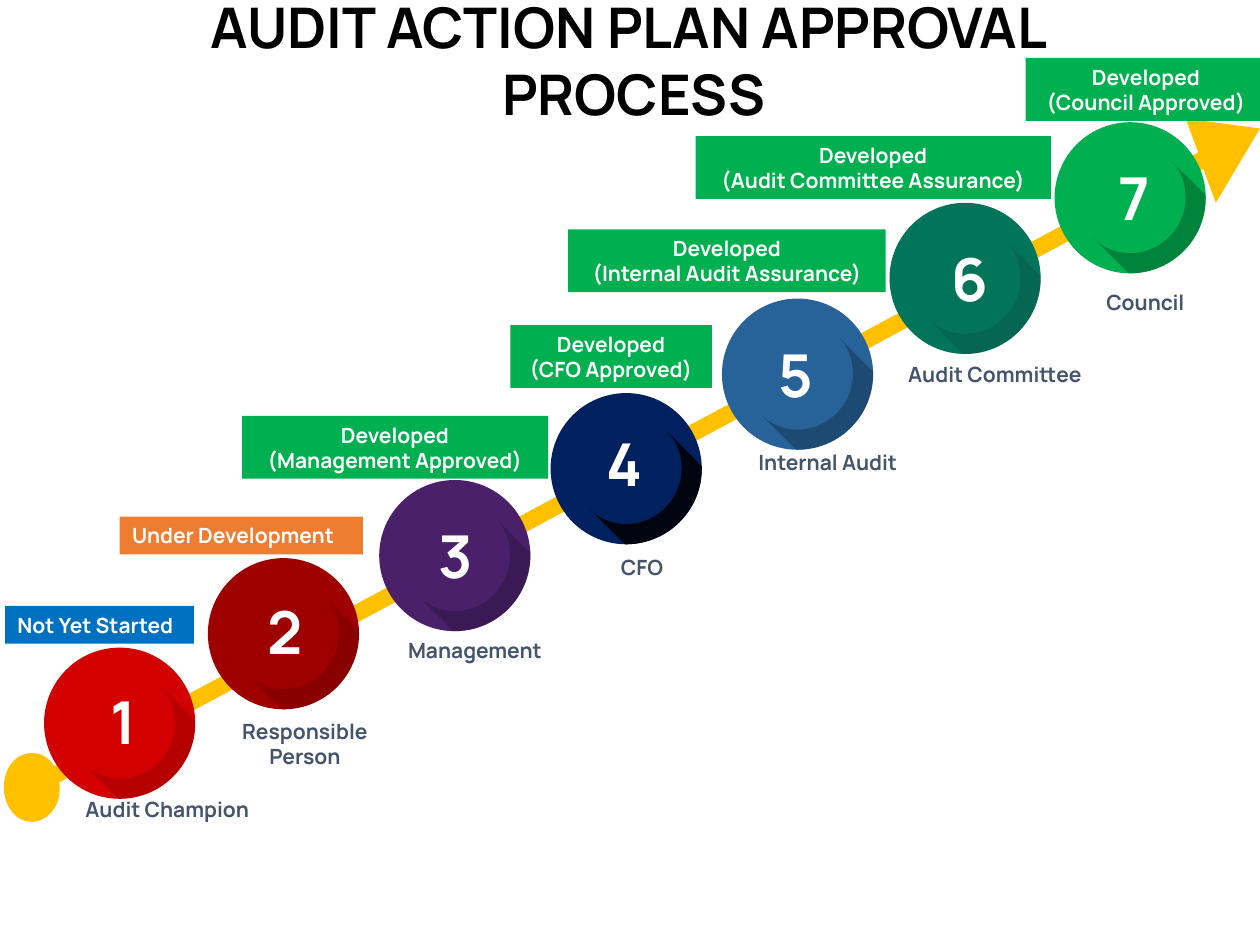
import lxml.etree
import pptx
import pptx.dml.color
import pptx.enum.shapes
import pptx.enum.text
import pptx.oxml.ns
import pptx.util

Inches = pptx.util.Inches
qn = pptx.oxml.ns.qn
ALIGN = pptx.enum.text.PP_ALIGN
ANCHOR = pptx.enum.text.MSO_ANCHOR
SHAPE = pptx.enum.shapes.MSO_SHAPE
FONT = "Manrope"

COLORS = {
    "black": "000000", "white": "FFFFFF", "label": "44546A", "arrow": "FFC000",
    "not_started": "0070C0", "developing": "ED7D31", "developed": "00B050",
}
TITLE = "AUDIT ACTION PLAN APPROVAL \nPROCESS"

# circle centre, circle colour, shade colour, shade opacity %, digit centre
STEPS = [
    ((0.95, 5.74), "D20000", "640000", 25, (0.98, 5.73)),
    ((2.25, 5.03), "9E0000", "480000", 25, (2.26, 5.01)),
    ((3.61, 4.41), "4A206A", "0D0513", 25, (3.62, 4.41)),
    ((4.97, 3.72), "002060", "000510", 100, (4.96, 3.68)),
    ((6.33, 2.97), "276399", "000000", 25, (6.32, 2.97)),
    ((7.66, 2.21), "027459", "0E3D3E", 25, (7.70, 2.21)),
    ((8.97, 1.57), "00B050", "000000", 25, (9.00, 1.57)),
]
# text, left, top, width, alignment
OWNERS = [
    ("Audit Champion", 0.58, 6.27, 1.63, ALIGN.LEFT),
    ("Responsible\nPerson", 1.76, 5.65, 1.32, ALIGN.CENTER),
    ("Management", 3.14, 5.01, 1.42, ALIGN.LEFT),
    ("CFO", 4.83, 4.35, 0.6, ALIGN.LEFT),
    ("Internal Audit", 5.92, 3.52, 1.43, ALIGN.LEFT),
    ("Audit Committee", 7.11, 2.82, 1.74, ALIGN.LEFT),
    ("Council", 8.64, 2.25, 0.9, ALIGN.CENTER),
]
# text, left, top, width, alignment, fill
STATUSES = [
    ("Not Yet Started", 0.04, 4.81, 1.5, ALIGN.LEFT, "not_started"),
    ("Under Development", 0.95, 4.1, 1.93, ALIGN.LEFT, "developing"),
    ("Developed\n(Management Approved)", 1.92, 3.3, 2.43, ALIGN.CENTER, "developed"),
    ("Developed\n(CFO Approved)", 4.05, 2.58, 1.6, ALIGN.CENTER, "developed"),
    ("Developed\n(Internal Audit Assurance)", 4.51, 1.82, 2.52, ALIGN.CENTER, "developed"),
    ("Developed\n(Audit Committee Assurance)", 5.52, 1.08, 2.82, ALIGN.CENTER, "developed"),
    ("Developed\n(Council Approved)", 8.14, 0.46, 1.91, ALIGN.CENTER, "developed"),
]
RADIUS = 0.6

# Outlines: one point is a straight segment, three points are a Bezier curve.
ARROW = [
    [(9.65, 1.61)], [(10, 1.02)], [(9.41, 0.94)], [(9.51, 1.21)], [(0.43, 6.08)],
    [(0.37, 5.98), (0.26, 5.95), (0.16, 6)],
    [(0.05, 6.06), (0, 6.22), (0.05, 6.36)],
    [(0.1, 6.5), (0.23, 6.56), (0.34, 6.5)],
    [(0.44, 6.45), (0.49, 6.33), (0.47, 6.21)],
    [(9.55, 1.34)],
]
# measured from the circle centre
CRESCENT = [
    [(0.6, -0.02)], [(0.33, -0.29)],
    [(0.4, -0.22), (0.44, -0.12), (0.44, 0)],
    [(0.44, 0.24), (0.24, 0.44), (0, 0.44)],
    [(-0.12, 0.44), (-0.23, 0.39), (-0.3, 0.31)],
    [(-0.01, 0.6)],
    [(0.33, 0.6), (0.6, 0.33), (0.6, 0)],
]


def rgb(color):
    return pptx.dml.color.RGBColor.from_string(color)


def paint(sp, color, opacity=100):
    sp.shadow.inherit = False
    sp.line.fill.background()
    sp.fill.solid()
    sp.fill.fore_color.rgb = rgb(color)
    if opacity < 100:
        clr = sp._element.spPr.find(".//" + qn("a:srgbClr"))
        lxml.etree.SubElement(clr, qn("a:alpha"), val=str(opacity * 1000))


def write(sp, text, size, color, align, anchor):
    tf = sp.text_frame
    tf.text = text
    tf.word_wrap = True
    tf.auto_size = pptx.enum.text.MSO_AUTO_SIZE.NONE
    tf.vertical_anchor = anchor
    for p in tf.paragraphs:
        p.alignment = align
        for r in p.runs:
            r.font.name, r.font.size, r.font.bold = FONT, pptx.util.Pt(size), True
            r.font.color.rgb = rgb(color)


def add_outline(s, segments, color, opacity=100, origin=(0, 0)):
    """Draw all points as lines, then merge each group of three into a curve."""
    points = [(Inches(x + origin[0]), Inches(y + origin[1]))
              for segment in segments for x, y in segment]
    fb = s.shapes.build_freeform(*points[0])
    fb.add_line_segments(points[1:], close=True)
    sp = fb.convert_to_shape()
    lines = iter(list(sp._element.iter(qn("a:lnTo"))))
    for segment in segments[1:]:
        parts = [next(lines) for _ in segment]
        if len(parts) == 3:
            curve = lxml.etree.Element(qn("a:cubicBezTo"))
            parts[0].addprevious(curve)
            for part in parts:
                curve.append(part[0])
                part.getparent().remove(part)
    paint(sp, color, opacity)


def box(left, top, width, height):
    return [Inches(v) for v in (left, top, width, height)]


def label_height(text):
    return 0.1 + 0.2 * len(text.split("\n"))


def add_step(s, number, center, color, shade, opacity, digit_center):
    x, y = center
    sp = s.shapes.add_shape(SHAPE.OVAL, *box(x - RADIUS, y - RADIUS, 2 * RADIUS, 2 * RADIUS))
    paint(sp, color)
    add_outline(s, CRESCENT, shade, opacity, center)
    x, y = digit_center
    sp = s.shapes.add_textbox(*box(x - 0.25, y - 0.34, 0.5, 0.67))
    write(sp, str(number), 33.8, COLORS["white"], ALIGN.CENTER, ANCHOR.MIDDLE)


def main():
    prs = pptx.Presentation()
    prs.slide_width, prs.slide_height = Inches(10), Inches(7.5)
    s = prs.slides.add_slide(prs.slide_layouts[5])

    title = s.shapes.title
    title.left, title.top, title.width, title.height = box(0.03, -0.11, 10, 1.18)
    write(title, TITLE, 32, COLORS["black"], ALIGN.CENTER, ANCHOR.TOP)

    add_outline(s, ARROW, COLORS["arrow"])
    for number, step in enumerate(STEPS, 1):
        add_step(s, number, *step)
    for text, left, top, width, align in OWNERS:
        sp = s.shapes.add_textbox(*box(left, top, width, label_height(text)))
        write(sp, text, 12, COLORS["label"], align, ANCHOR.BOTTOM)
    for text, left, top, width, align, fill in STATUSES:
        sp = s.shapes.add_shape(SHAPE.RECTANGLE, *box(left, top, width, label_height(text)))
        paint(sp, COLORS[fill])
        write(sp, text, 12, COLORS["white"], align, ANCHOR.BOTTOM)

    prs.save("out.pptx")


if __name__ == "__main__":
    main()
